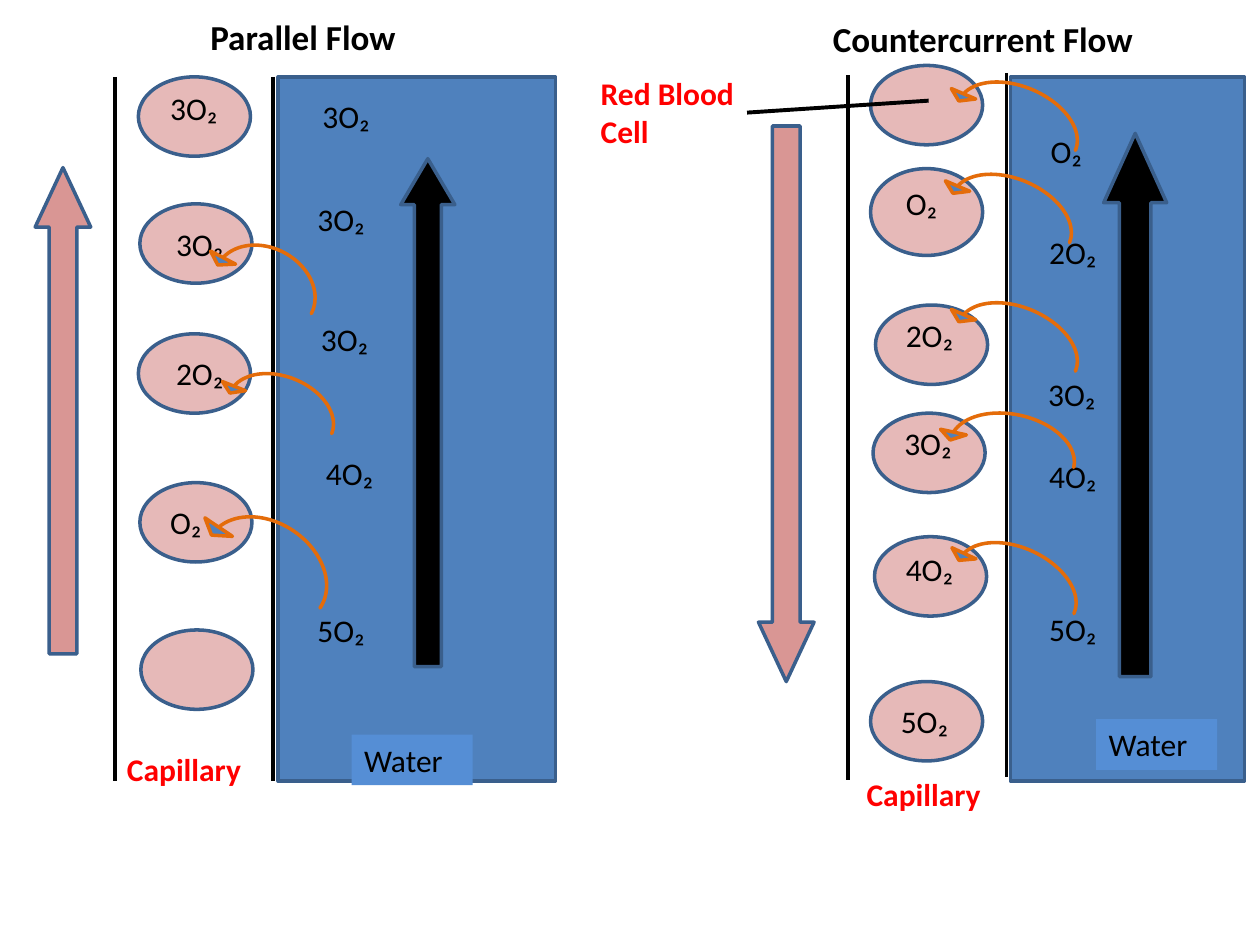
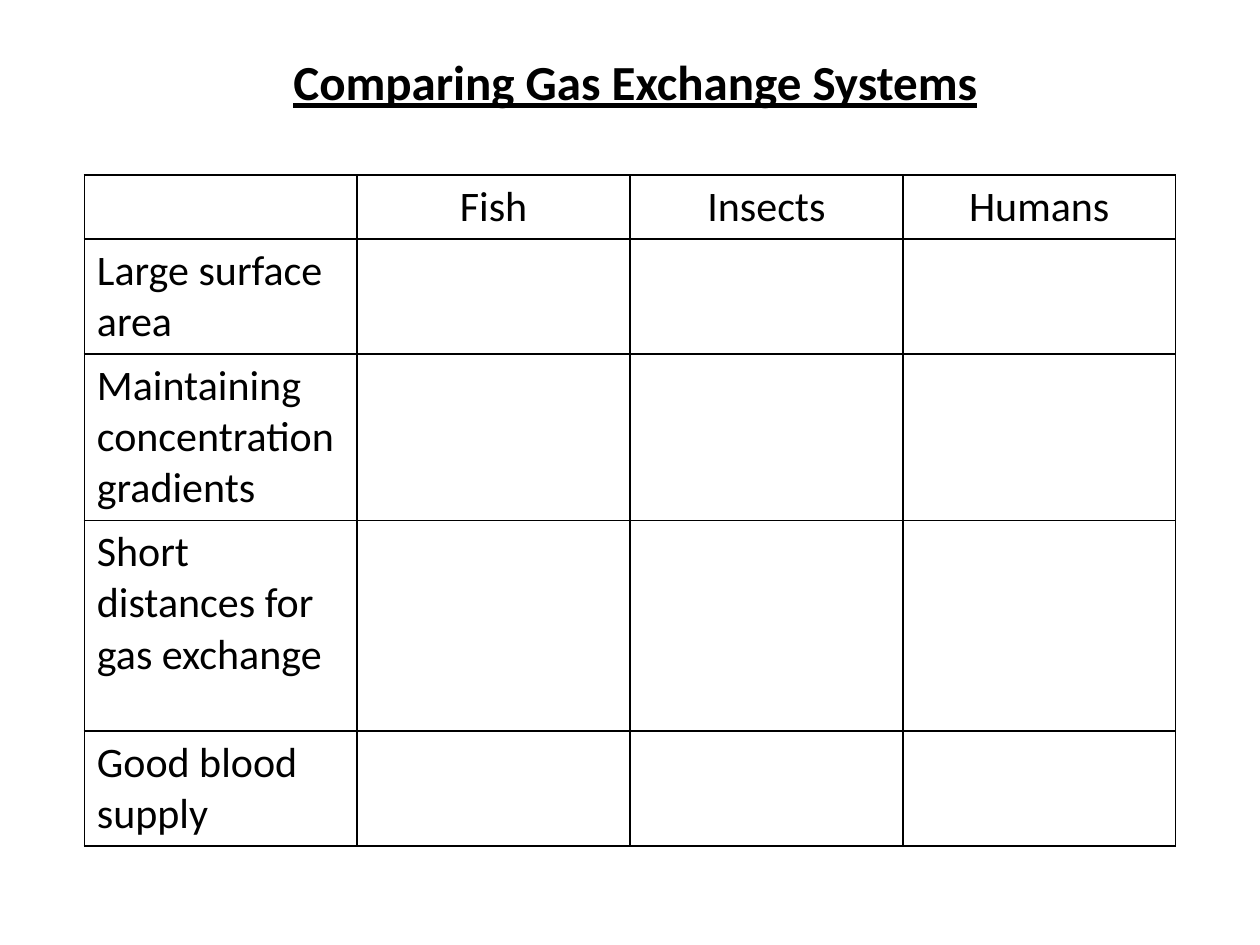
from dataclasses import dataclass
from typing import NamedTuple, Optional

import lxml.etree
import pptx
import pptx.dml.color
import pptx.enum.shapes
import pptx.enum.text
import pptx.oxml.ns
import pptx.shapes.autoshape
import pptx.shapes.connector
import pptx.slide
import pptx.table
import pptx.util

Cm = pptx.util.Cm
Pt = pptx.util.Pt
SHAPE = pptx.enum.shapes.MSO_SHAPE
ALIGN = pptx.enum.text.PP_ALIGN

# Shared style
FONT = "Calibri"
BLACK, RED = "000000", "FF0000"
OUTLINE, CURVE_ORANGE = "3A5F8C", "E46C0A"
CELL_PINK, BLOOD_PINK = "E6B9B8", "D99694"
WATER_BLUE, WATER_LABEL_BLUE = "4F81BD", "558ED5"
OUTLINE_WIDTH, WALL_WIDTH = 2, 2.25
LABEL_HEIGHT = 1.02
TITLE_ONLY, BLANK = 5, 6


class Box(NamedTuple):
    """Left, top, width and height in centimetres."""
    left: float
    top: float
    width: float
    height: float

    def lengths(self) -> list:
        return [Cm(value) for value in self]


class Oxygen(NamedTuple):
    text: str
    left: float
    top: float


class Transfer(NamedTuple):
    """Curved arrow carrying oxygen from water to blood."""
    box: Box
    angle: float


class FlowArrow(NamedTuple):
    box: Box
    head: float
    angle: float = 0


class Wall(NamedTuple):
    x: float
    top: float


@dataclass
class FlowPanel:
    heading: str
    heading_box: Box
    walls: list[Wall]
    water: Box
    cells: list[Box]
    oxygen: list[Oxygen]
    transfers: list[Transfer]
    blood_flow: FlowArrow
    water_flow: FlowArrow
    water_label: Box
    capillary_label: Box


def blood_cell(left: float, top: float, height: float = 1.6) -> Box:
    return Box(left, top, 2.26, height)


def counter_transfer(left: float, top: float, angle: float = 113) -> Transfer:
    return Transfer(Box(left, top, 0.79, 2.82), angle)


WALL_LENGTH = 14.2

PARALLEL = FlowPanel(
    heading="Parallel Flow",
    heading_box=Box(3.99, 0.18, 4.29, 1.12),
    walls=[Wall(2.31, 1.55), Wall(5.51, 1.55)],
    water=Box(5.61, 1.55, 5.59, WALL_LENGTH),
    cells=[blood_cell(2.79, 1.55), blood_cell(2.82, 4.11), blood_cell(2.79, 6.73),
           blood_cell(2.82, 9.73), blood_cell(2.84, 12.7)],
    oxygen=[
        Oxygen("3O₂", 3.18, 1.68), Oxygen("3O₂", 3.3, 4.42),
        Oxygen("2O₂", 3.3, 7.01), Oxygen("O₂", 3.18, 10.01),
        Oxygen("3O₂", 6.25, 1.83), Oxygen("3O₂", 6.15, 3.91), Oxygen("3O₂", 6.22, 6.32),
        Oxygen("4O₂", 6.32, 9.02), Oxygen("5O₂", 6.15, 12.19),
    ],
    transfers=[Transfer(Box(4.98, 4.19, 0.84, 2.41), 117.5),
               Transfer(Box(5.31, 6.71, 0.74, 2.46), 111.6),
               Transfer(Box(5, 9.53, 0.99, 2.97), 123.8)],
    blood_flow=FlowArrow(Box(0.71, 3.38, 1.12, 9.8), 1.07),
    water_flow=FlowArrow(Box(8.08, 3.2, 1.09, 10.24), 0.85),
    water_label=Box(7.09, 14.81, 2.44, LABEL_HEIGHT),
    capillary_label=Box(2.31, 14.99, 3.12, LABEL_HEIGHT),
)

COUNTERCURRENT = FlowPanel(
    heading="Countercurrent Flow",
    heading_box=Box(16.54, 0.23, 7.77, 1.12),
    walls=[Wall(17.09, 1.52), Wall(20.29, 1.47)],
    water=Box(20.37, 1.55, 4.72, WALL_LENGTH),
    cells=[blood_cell(17.55, 1.32), blood_cell(17.55, 3.4, 1.75), blood_cell(17.65, 6.15),
           blood_cell(17.6, 8.33), blood_cell(17.63, 10.82), blood_cell(17.55, 13.74)],
    oxygen=[
        Oxygen("O₂", 18.01, 3.58), Oxygen("2O₂", 18.01, 6.25), Oxygen("3O₂", 17.98, 8.43),
        Oxygen("4O₂", 18.01, 10.97), Oxygen("5O₂", 17.91, 14.02),
        Oxygen("O₂", 20.93, 2.54), Oxygen("2O₂", 20.9, 4.57), Oxygen("3O₂", 20.88, 7.44),
        Oxygen("4O₂", 20.9, 9.09), Oxygen("5O₂", 20.9, 12.17),
    ],
    transfers=[counter_transfer(20.14, 0.71), counter_transfer(20.02, 2.57),
               counter_transfer(20.14, 5.16), counter_transfer(19.96, 7.32, 102.4),
               counter_transfer(20.14, 10.01, 114.9)],
    blood_flow=FlowArrow(Box(15.29, 2.54, 1.12, 11.2), 1.07, 180),
    water_flow=FlowArrow(Box(22.25, 2.69, 1.27, 10.95), 1.1),
    water_label=Box(22.1, 14.5, 2.44, LABEL_HEIGHT),
    capillary_label=Box(17.22, 15.49, 2.9, LABEL_HEIGHT),
)

SYSTEMS = ["Fish", "Insects", "Humans"]
FEATURES = {  # feature: row height
    "Large surface area": 2.24,
    "Maintaining concentration gradients": 3.23,
    "Short distances for gas exchange": 4.24,
    "Good blood supply": 2.24,
}


# Drawing helpers
def rgb(color: str) -> pptx.dml.color.RGBColor:
    return pptx.dml.color.RGBColor.from_string(color)


def write(frame: pptx.text.text.TextFrame, text: str, size: float, color: str = BLACK,
          bold: bool = False, underline: bool = False, align: ALIGN = ALIGN.LEFT) -> None:
    frame.text = text
    paragraph = frame.paragraphs[0]
    paragraph.alignment = align
    for run in paragraph.runs:
        run.font.name = FONT
        run.font.size = Pt(size)
        run.font.bold = bold
        run.font.underline = underline
        run.font.color.rgb = rgb(color)


def draw_text(slide: pptx.slide.Slide, box: Box, text: str, size: float = 18,
              color: str = BLACK, bold: bool = False,
              fill: Optional[str] = None) -> pptx.shapes.autoshape.Shape:
    label = slide.shapes.add_textbox(*box.lengths())
    label.text_frame.word_wrap = True
    if fill:
        label.fill.solid()
        label.fill.fore_color.rgb = rgb(fill)
    write(label.text_frame, text, size, color, bold)
    return label


def draw_shape(slide: pptx.slide.Slide, kind: SHAPE, box: Box, fill: str,
               line: str = OUTLINE, angle: float = 0, adjust: tuple = ()) -> None:
    shape = slide.shapes.add_shape(kind, *box.lengths())
    shape.shadow.inherit = False
    shape.fill.solid()
    shape.fill.fore_color.rgb = rgb(fill)
    shape.line.color.rgb = rgb(line)
    shape.line.width = Pt(OUTLINE_WIDTH)
    shape.rotation = angle
    for index, value in enumerate(adjust):
        shape.adjustments[index] = value


def draw_line(slide: pptx.slide.Slide, x1: float, y1: float, x2: float,
              y2: float) -> pptx.shapes.connector.Connector:
    line = slide.shapes.add_connector(pptx.enum.shapes.MSO_CONNECTOR.STRAIGHT,
                                      Cm(x1), Cm(y1), Cm(x2), Cm(y2))
    line.line.color.rgb = rgb(BLACK)
    line.line.width = Pt(WALL_WIDTH)
    lxml.etree.SubElement(line._element.spPr, pptx.oxml.ns.qn("a:effectLst"))
    return line


def draw_flow_arrow(slide: pptx.slide.Slide, arrow: FlowArrow, fill: str) -> None:
    draw_shape(slide, SHAPE.UP_ARROW, arrow.box, fill, angle=arrow.angle,
               adjust=(0.5, arrow.head))


def draw_panel(slide: pptx.slide.Slide, panel: FlowPanel) -> None:
    draw_text(slide, panel.heading_box, panel.heading, size=20, bold=True)
    # Capillary and water
    for wall in panel.walls:
        draw_line(slide, wall.x, wall.top, wall.x, wall.top + WALL_LENGTH)
    for cell in panel.cells:
        draw_shape(slide, SHAPE.OVAL, cell, CELL_PINK)
    draw_shape(slide, SHAPE.RECTANGLE, panel.water, WATER_BLUE)
    # Oxygen levels and transfers
    for level in panel.oxygen:
        draw_text(slide, Box(level.left, level.top, 1.52, LABEL_HEIGHT), level.text)
    for transfer in panel.transfers:
        draw_shape(slide, SHAPE.CURVED_RIGHT_ARROW, transfer.box, WATER_BLUE, CURVE_ORANGE,
                   transfer.angle, (0, 0.675, 0.216))
    # Flow directions and names
    draw_flow_arrow(slide, panel.blood_flow, BLOOD_PINK)
    draw_flow_arrow(slide, panel.water_flow, BLACK)
    draw_text(slide, panel.water_label, "Water", fill=WATER_LABEL_BLUE)
    draw_text(slide, panel.capillary_label, "Capillary", color=RED, bold=True)


def border_cell(cell: pptx.table._Cell) -> None:
    properties = cell._tc.get_or_add_tcPr()
    for side in ("a:lnL", "a:lnR", "a:lnT", "a:lnB"):
        edge = lxml.etree.SubElement(properties, pptx.oxml.ns.qn(side), w=str(Pt(1)))
        fill = lxml.etree.SubElement(edge, pptx.oxml.ns.qn("a:solidFill"))
        lxml.etree.SubElement(fill, pptx.oxml.ns.qn("a:srgbClr"), val=BLACK)
    cell.fill.background()


# Slides
def add_flow_slide(deck: pptx.presentation.Presentation) -> None:
    slide = deck.slides.add_slide(deck.slide_layouts[BLANK])
    for panel in (PARALLEL, COUNTERCURRENT):
        draw_panel(slide, panel)
    red_blood_cell = draw_text(slide, Box(11.86, 1.37, 3.2, 1.8), "Red Blood Cell",
                               color=RED, bold=True)
    pointer = draw_line(slide, 15.06, 2.27, 18.72, 2.03)
    pointer.begin_connect(red_blood_cell, 3)


def add_comparison_slide(deck: pptx.presentation.Presentation) -> None:
    slide = deck.slides.add_slide(deck.slide_layouts[TITLE_ONLY])
    title = slide.shapes.title
    title.left, title.top, title.width, title.height = Box(5.11, 0.91, 15.39, 1.45).lengths()
    title.text_frame.auto_size = pptx.enum.text.MSO_AUTO_SIZE.NONE
    title.text_frame.vertical_anchor = pptx.enum.text.MSO_ANCHOR.TOP
    write(title.text_frame, "Comparing Gas Exchange Systems", 28, bold=True,
          underline=True, align=ALIGN.CENTER)

    heights = [1.24, *FEATURES.values()]
    box = Box(1.7, 3.53, 22, sum(heights))
    comparison = slide.shapes.add_table(len(heights), len(SYSTEMS) + 1, *box.lengths()).table
    comparison.first_row = comparison.horz_banding = False
    for row, height in zip(comparison.rows, heights):
        row.height = Cm(height)
    for cell in comparison.iter_cells():
        border_cell(cell)
    for column, system in enumerate(SYSTEMS, start=1):
        write(comparison.cell(0, column).text_frame, system, 24, align=ALIGN.CENTER)
    for row, feature in enumerate(FEATURES, start=1):
        write(comparison.cell(row, 0).text_frame, feature, 24)


def main() -> None:
    deck = pptx.Presentation()
    deck.slide_width, deck.slide_height = Cm(25.4), Cm(19.05)
    add_flow_slide(deck)
    add_comparison_slide(deck)
    deck.save("out.pptx")


if __name__ == "__main__":
    main()
